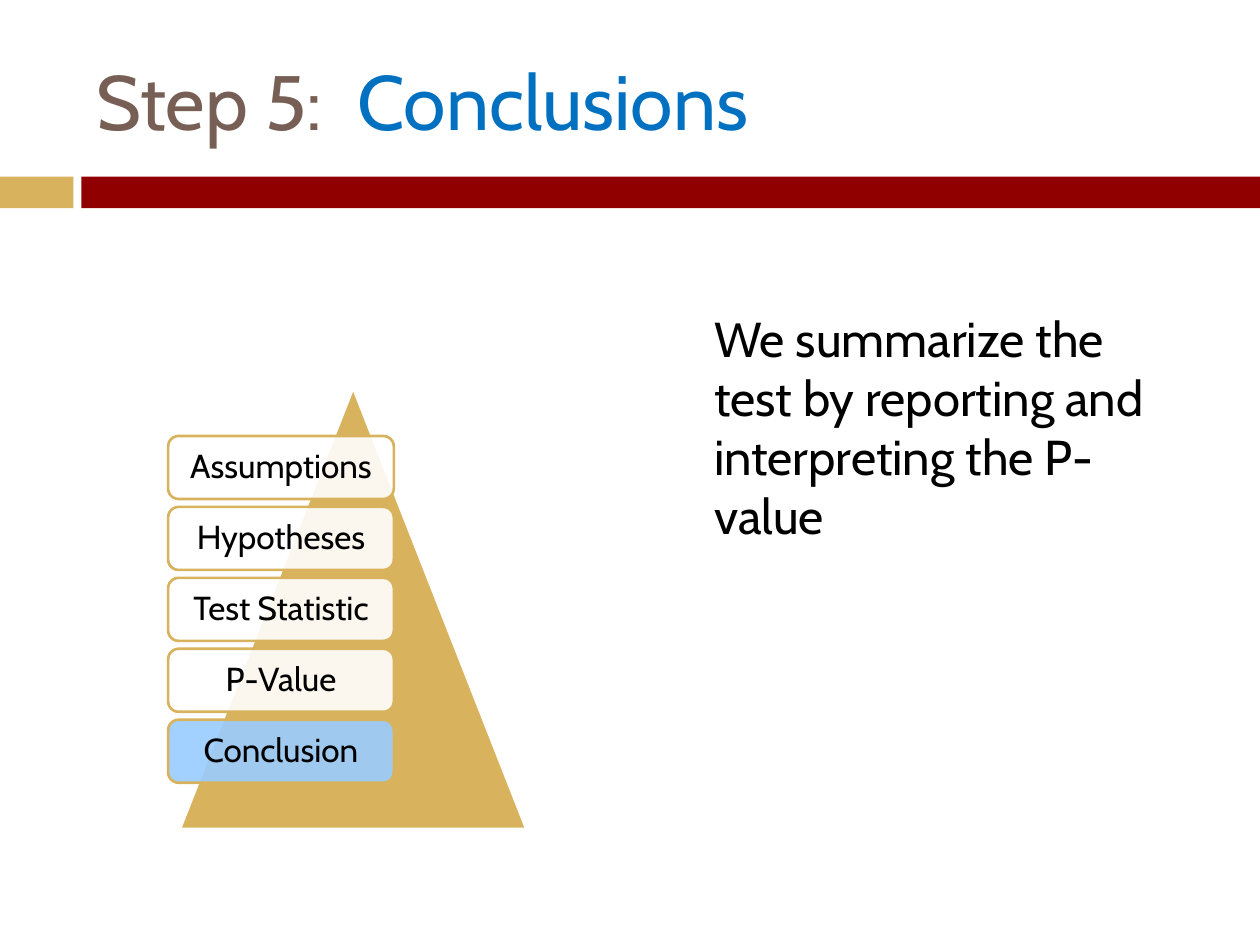
from dataclasses import dataclass

import pptx
import pptx.dml.color
import pptx.enum.shapes
import pptx.enum.text
import pptx.oxml
import pptx.oxml.ns
import pptx.shapes.autoshape
import pptx.slide
import pptx.text.text
import pptx.util

Cm = pptx.util.Cm
KIND = pptx.enum.shapes.MSO_SHAPE
ALIGN = pptx.enum.text.PP_ALIGN
MIDDLE = pptx.enum.text.MSO_ANCHOR.MIDDLE


@dataclass(frozen=True)
class Theme:
    font: str = "Cabin"
    gold: str = "D8B25C"
    red: str = "900000"
    brown: str = "775F55"
    blue: str = "0070C0"
    sky: str = "99CCFF"
    white: str = "FFFFFF"
    black: str = "000000"
    head: int = 44
    body: int = 28
    label: int = 19
    edge: float = 1.5


@dataclass(frozen=True)
class Box:
    left: float
    top: float
    width: float
    height: float

    def span(self) -> tuple:
        return Cm(self.left), Cm(self.top), Cm(self.width), Cm(self.height)


@dataclass(frozen=True)
class Step:
    name: str
    fill: str


LOOK = Theme()
STEPS = [
    Step("Assumptions", LOOK.white),
    Step("Hypotheses", LOOK.white),
    Step("Test Statistic", LOOK.white),
    Step("P-Value", LOOK.white),
    Step("Conclusion", LOOK.sky),
]
FIRST = Box(3.39, 8.79, 4.55, 1.27)
PITCH = 1.43


def tint(code: str) -> pptx.dml.color.RGBColor:
    return pptx.dml.color.RGBColor.from_string(code)


def add_run(para: pptx.text.text._Paragraph, text: str, size: int, code: str) -> None:
    run = para.add_run()
    run.text = text
    run.font.name = LOOK.font
    run.font.size = pptx.util.Pt(size)
    run.font.color.rgb = tint(code)


def add_form(slide: pptx.slide.Slide, kind: KIND, box: Box, fill: str,
             line: str = "") -> pptx.shapes.autoshape.Shape:
    form = slide.shapes.add_shape(kind, *box.span())
    form.shadow.inherit = False
    form.fill.solid()
    form.fill.fore_color.rgb = tint(fill)
    if line:
        form.line.color.rgb = tint(line)
        form.line.width = pptx.util.Pt(LOOK.edge)
    else:
        form.line.fill.background()
    return form


def add_text(slide: pptx.slide.Slide, box: Box) -> pptx.text.text.TextFrame:
    frame = slide.shapes.add_textbox(*box.span()).text_frame
    frame.word_wrap = True
    return frame


def set_alpha(form: pptx.shapes.autoshape.Shape, share: int) -> None:
    color = form.fill._xPr.find(".//" + pptx.oxml.ns.qn("a:srgbClr"))
    alpha = pptx.oxml.parse_xml(
        f'<a:alpha {pptx.oxml.ns.nsdecls("a")} val="{share * 1000}"/>')
    color.append(alpha)


def add_step(slide: pptx.slide.Slide, step: Step, box: Box) -> None:
    card = add_form(slide, KIND.ROUNDED_RECTANGLE, box, step.fill, LOOK.gold)
    set_alpha(card, 90)
    frame = card.text_frame
    frame.word_wrap = True
    frame.vertical_anchor = MIDDLE
    frame.margin_left = frame.margin_right = Cm(0.27)
    frame.margin_top = frame.margin_bottom = Cm(0.2)
    para = frame.paragraphs[0]
    para.alignment = ALIGN.CENTER
    para.line_spacing = 0.9
    add_run(para, step.name, LOOK.label, LOOK.black)


def main() -> None:
    deck = pptx.Presentation()
    deck.slide_width, deck.slide_height = Cm(25.4), Cm(19.05)
    slide = deck.slides.add_slide(deck.slide_layouts[6])

    # Band under the title
    add_form(slide, KIND.RECTANGLE, Box(0, 3.56, 1.48, 0.64), LOOK.gold)
    add_form(slide, KIND.RECTANGLE, Box(1.64, 3.56, 23.76, 0.64), LOOK.red)

    # Body text, set in from the left
    body = add_text(slide, Box(13.13, 6.1, 11, 10.92))
    body.margin_left = Cm(1.27)
    add_run(body.paragraphs[0],
            "We summarize the test by reporting and interpreting the P-value",
            LOOK.body, LOOK.black)

    # Title
    title = add_text(slide, Box(1.69, 0.64, 22.66, 2.74))
    title.vertical_anchor = MIDDLE
    add_run(title.paragraphs[0], "Step 5:  ", LOOK.head, LOOK.brown)
    add_run(title.paragraphs[0], "Conclusions", LOOK.head, LOOK.blue)

    # Pyramid with the steps stacked on it
    add_form(slide, KIND.ISOSCELES_TRIANGLE, Box(3.63, 7.82, 6.98, 8.89),
             LOOK.gold, LOOK.white)
    for row, step in enumerate(STEPS):
        top = FIRST.top + row * PITCH
        add_step(slide, step, Box(FIRST.left, top, FIRST.width, FIRST.height))

    deck.save("out.pptx")


if __name__ == "__main__":
    main()
